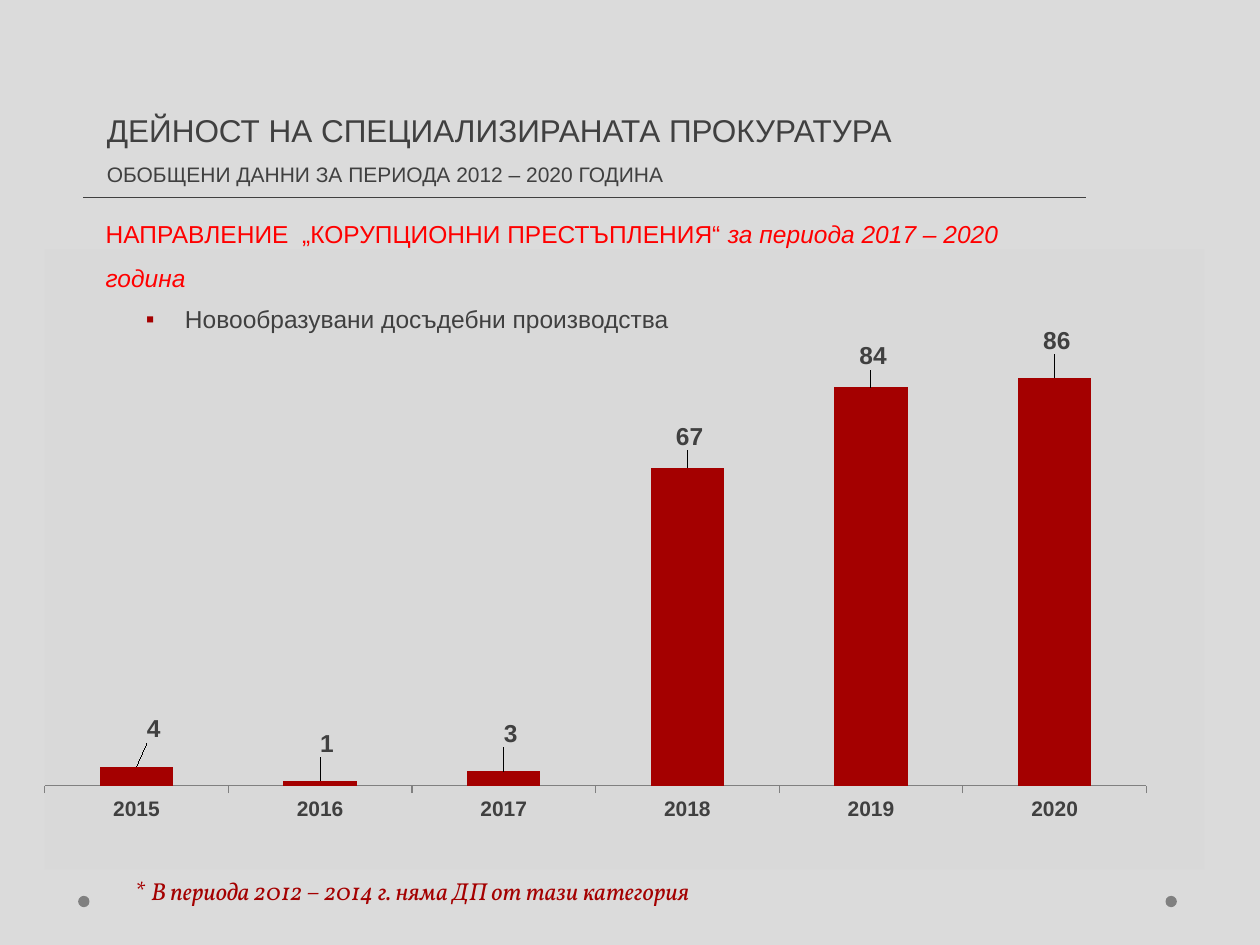
from lxml import etree
from pptx import Presentation
from pptx.chart.data import CategoryChartData
from pptx.dml.color import RGBColor
from pptx.enum.chart import XL_CHART_TYPE, XL_LABEL_POSITION, XL_TICK_LABEL_POSITION, XL_TICK_MARK
from pptx.enum.shapes import MSO_CONNECTOR, MSO_SHAPE
from pptx.oxml import parse_xml
from pptx.oxml.ns import nsdecls, qn
from pptx.util import Inches, Pt

COLUMN = XL_CHART_TYPE.COLUMN_CLUSTERED
ABOVE = XL_LABEL_POSITION.OUTSIDE_END
LOW = XL_TICK_LABEL_POSITION.LOW
OUT, NONE = XL_TICK_MARK.OUTSIDE, XL_TICK_MARK.NONE
LINE, DOT = MSO_CONNECTOR.STRAIGHT, MSO_SHAPE.OVAL
COLORS = {"back": "DBDBDB", "chart": "D9D9D9", "text": "404040",
          "bar": "A40000", "head": "FF0000", "dot": "808080"}


def style(font, size, color, name="Arial", bold=False, italic=False):
    font.size, font.name = Pt(size), name
    font.bold, font.italic = bold, italic
    font.color.rgb = RGBColor.from_string(COLORS[color])


def add_text(box, paras, space=1.5):
    """Add a text box; each paragraph is a list of (text, style options)."""
    frame = slide.shapes.add_textbox(*map(Inches, box)).text_frame
    frame.word_wrap = True
    for i, runs in enumerate(paras):
        para = frame.add_paragraph() if i else frame.paragraphs[0]
        para.line_spacing = space
        for text, look in runs:
            run = para.add_run()
            run.text = text
            style(run.font, **look)
    return frame


prs = Presentation()
prs.slide_width, prs.slide_height = Inches(10), Inches(7.5)
slide = prs.slides.add_slide(prs.slide_layouts[6])
back = slide.background.fill
back.solid()
back.fore_color.rgb = RGBColor.from_string(COLORS["back"])

# Corner dots
for left in (9.25, 0.62):
    dot = slide.shapes.add_shape(DOT, Inches(left), Inches(7.11), Inches(0.09), Inches(0.09))
    dot.shadow.inherit = False
    dot.fill.solid()
    dot.fill.fore_color.rgb = RGBColor.from_string(COLORS["dot"])
    dot.line.fill.background()

# Column chart
data = CategoryChartData()
data.categories = ["2015", "2016", "2017", "2018", "2019", "2020"]
data.add_series("Series 1", (4, 1, 3, 67, 84, 86))
chart = slide.shapes.add_chart(
    COLUMN, Inches(0.35), Inches(1.98), Inches(9.21), Inches(4.92), data).chart
chart.has_legend = chart.has_title = False
chart.font.size, chart.font.name = Pt(10), "Vollkorn"

years = chart.category_axis
years.major_tick_mark, years.minor_tick_mark = OUT, NONE
years.tick_label_position = LOW
years.has_major_gridlines = False
years.format.line.color.rgb = RGBColor.from_string(COLORS["dot"])
style(years.tick_labels.font, 12, "text", bold=True)
count = chart.value_axis
count.visible = count.has_major_gridlines = False
count.minimum_scale, count.maximum_scale = 0, 100

plot = chart.plots[0]
plot.gap_width, plot.vary_by_categories = 150, False
bars = plot.series[0]
bars.format.fill.solid()
bars.format.fill.fore_color.rgb = RGBColor.from_string(COLORS["bar"])
bars.data_labels.show_value = True
bars.data_labels.position = ABOVE
style(bars.data_labels.font, 14, "text", bold=True)

# Labels moved off their usual spots, as shares of the chart size
shifts = [(0.015, -0.03), (0.006, -0.03), (0.006, -0.03),
          (0.002, -0.02), (0.002, -0.02), (0.002, -0.03)]
for i, (right, down) in enumerate(shifts):
    label = bars.points[i].data_label
    style(label.font, 14, "text", bold=True)
    label.position = ABOVE
    index = bars.data_labels._element.findall(qn("c:dLbl"))[i].find(qn("c:idx"))
    index.addnext(parse_xml(
        f'<c:layout {nsdecls("c")}><c:manualLayout><c:x val="{right}"/>'
        f'<c:y val="{down}"/></c:manualLayout></c:layout>'))

root = chart.element.find(qn("c:chart"))
root.addnext(parse_xml(
    f'<c:spPr {nsdecls("c", "a")}><a:solidFill><a:srgbClr val="{COLORS["chart"]}"/>'
    '</a:solidFill><a:ln><a:noFill/></a:ln></c:spPr>'))
area = root.find(qn("c:plotArea"))
for old in area.findall(qn("c:layout")):
    area.remove(old)
sizes = "".join(f'<c:{key} val="{val}"/>' for key, val in
                (("x", 0), ("y", 0.1), ("w", 0.95), ("h", 0.765)))
area.insert(0, parse_xml(
    f'<c:layout {nsdecls("c")}><c:manualLayout><c:layoutTarget val="inner"/>'
    f'<c:xMode val="edge"/><c:yMode val="edge"/>{sizes}</c:manualLayout></c:layout>'))

# Title, bullet, rule, heading and footnote
add_text((0.75, 0.68, 7.4, 0.86), [
    [("ДЕЙНОСТ НА СПЕЦИАЛИЗИРАНАТА ПРОКУРАТУРА", dict(size=18, color="text"))],
    [("ОБОБЩЕНИ ДАННИ ЗА ПЕРИОДА 2012 – 2020 ГОДИНА", dict(size=12, color="text"))]])

point = add_text((1.06, 2.25, 6.59, 0.41), [
    [("Новообразувани досъдебни производства", dict(size=14, color="text"))]])
props = point.paragraphs[0]._p.get_or_add_pPr()
props.set("marL", str(Inches(0.31)))
props.set("indent", str(-Inches(0.31)))
tint = etree.SubElement(props, qn("a:buClr"))
etree.SubElement(tint, qn("a:srgbClr"), val=COLORS["bar"])
etree.SubElement(props, qn("a:buFont"), typeface="Arial")
etree.SubElement(props, qn("a:buChar"), char="▪")

rule = slide.shapes.add_connector(LINE, Inches(0.66), Inches(1.57), Inches(8.62), Inches(1.57))
rule.line.width = Pt(0.75)
rule.line.color.rgb = RGBColor.from_string(COLORS["text"])
etree.SubElement(rule._element.spPr, qn("a:effectLst"))

add_text((0.74, 1.57, 7.88, 0.81), [
    [("НАПРАВЛЕНИЕ  „КОРУПЦИОННИ ПРЕСТЪПЛЕНИЯ“ ", dict(size=14, color="head")),
     ("за периода 2017 – 2020 година", dict(size=14, color="head", italic=True))]])

note = dict(size=14, color="bar", name="Vollkorn")
add_text((0.98, 6.9, 7.17, 0.34), [
    [("*", note), (" В периода 2012 – 2014 г. няма ДП от тази категория",
                   dict(note, italic=True))]], space=1)

prs.save("out.pptx")
